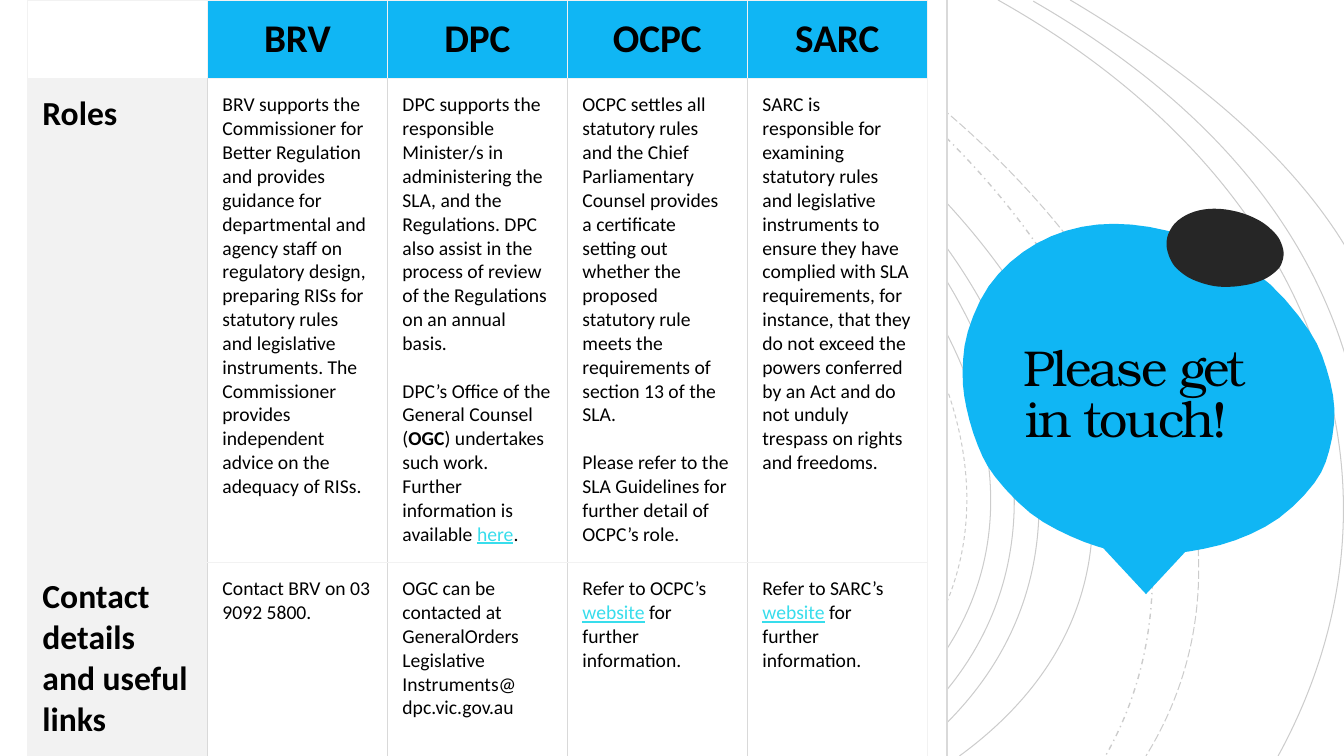
from lxml import etree
from pptx import Presentation
from pptx import util as u
from pptx.dml.color import RGBColor
from pptx.enum import dml, shapes, text
from pptx.oxml import ns

BLUE = RGBColor(0x10, 0xB6, 0xF4)
BLACK = RGBColor(0, 0, 0)
CHARCOAL = RGBColor(0x26, 0x26, 0x26)
WHITE = RGBColor(0xFF, 0xFF, 0xFF)
PALE = RGBColor(0xF2, 0xF2, 0xF2)
GREY = RGBColor(0xD9, 0xD9, 0xD9)
LINK = RGBColor(0x38, 0xDD, 0xEC)

DASH = dml.MSO_LINE.DASH
DASH_DOT = dml.MSO_LINE.DASH_DOT
LONG_DASH = dml.MSO_LINE.LONG_DASH
SOLID = dml.MSO_LINE.SOLID

# Four Bezier points in centimetres, line width, dash
ARCS = [
    ((11.05, 0), (21.21, 2.92), (28.17, 13.74), (19.0, 19.05), 0.75, SOLID),
    ((12.7, 0), (22.43, 3.18), (28.98, 13.69), (20.35, 19.05), 0.75, DASH),
    ((13.46, 0), (23.04, 3.25), (29.51, 13.67), (21.03, 19.05), 0.75, SOLID),
    ((15.14, 0), (24.08, 3.38), (29.51, 13.77), (22.05, 19.05), 0.75, SOLID),
    ((15.7, 0), (24.61, 3.51), (30.02, 13.56), (22.91, 19.05), 0.75, SOLID),
    ((16.64, 0), (25.15, 3.73), (31.83, 13.46), (24.18, 19.05), 0.75, SOLID),
    ((19.25, 0), (26.82, 4.24), (31.32, 12.95), (27.86, 19.05), 1, DASH_DOT),
    ((19.74, 0), (27.58, 4.29), (32.79, 12.7), (28.88, 19.05), 0.75, LONG_DASH),
    ((25.15, 0), (33.53, 4.7), (35.81, 12.47), (32.21, 19.05), 0.75, SOLID),
    ((26.04, 0.03), (30.23, 2.44), (32.82, 5.44), (33.9, 8.94), 0.75, SOLID),
    ((26.97, 0), (29.92, 1.75), (32.44, 3.81), (33.9, 6.2), 0.75, SOLID),
]

# Outline shared by the bubble and its dark spot, in percent of the box
BLOB = [
    (1, 55.5), (0, 45), (1.4, 32.6), (7, 18.9), (16.3, 8.5), (27.9, 2.1),
    (40.7, 0), (55, 2.1), (69.4, 8.2), (82.7, 18.3), (93.2, 32.3), (97.8, 43.6),
    (100, 56.1), (98.6, 68.6), (94.6, 78.4), (85.1, 89), (73.4, 95.7), (61, 99.1),
    (50.1, 100), (40.1, 98.8), (29, 94.5), (18.2, 87.5), (8.7, 76.5), (4.1, 67.1),
]

HEADINGS = ["", "BRV", "DPC", "OCPC", "SARC"]
# Each cell is a list of paragraphs; ** marks bold and __ marks link text
ROLES = [
    ["**Roles"],
    ["BRV supports the Commissioner for Better Regulation and provides guidance for "
     "departmental and agency staff on regulatory design, preparing RISs for statutory "
     "rules and legislative instruments. The Commissioner provides independent advice "
     "on the adequacy of RISs."],
    ["DPC supports the responsible Minister/s in administering the SLA, and the "
     "Regulations. DPC also assist in the process of review of the Regulations on an "
     "annual basis.",
     "DPC’s Office of the General Counsel (|**OGC|) undertakes such work. Further "
     "information is available |__here|."],
    ["OCPC settles all statutory rules and the Chief Parliamentary Counsel provides a "
     "certificate setting out whether the proposed statutory rule meets the "
     "requirements of section 13 of the SLA.",
     "Please refer to the SLA Guidelines for further detail of OCPC’s role."],
    ["SARC is responsible for examining statutory rules and legislative instruments to "
     "ensure they have complied with SLA requirements, for instance, that they do not "
     "exceed the powers conferred by an Act and do not unduly trespass on rights and "
     "freedoms."],
]
CONTACTS = [
    ["**Contact details and useful links"],
    ["Contact BRV on 03 9092 5800."],
    ["OGC can be contacted at GeneralOrders\nLegislative\nInstruments@\ndpc.vic.gov.au"],
    ["Refer to OCPC’s |__website| for further information."],
    ["Refer to SARC’s |__website| for further information."],
]


def set_attributes(target, values):
    for name, value in values.items():
        setattr(target, name, value)


def paint(shape, colour):
    shape.shadow.inherit = False
    shape.fill.solid()
    shape.fill.fore_color.rgb = colour
    shape.line.fill.background()


def add_outline(slide, points, close):
    """Draw a freeform through points given in centimetres."""
    vertices = [(u.Cm(x), u.Cm(y)) for x, y in points]
    builder = slide.shapes.build_freeform(*vertices[0], scale=1.0)
    builder.add_line_segments(vertices[1:], close=close)
    shape = builder.convert_to_shape()
    shape.shadow.inherit = False
    return shape


def add_curve(slide, controls):
    """Draw one Bezier curve by joining the three segments of its control points."""
    shape = add_outline(slide, controls, close=False)
    segments = list(shape._element.iter(ns.qn("a:lnTo")))
    curve = etree.SubElement(segments[0].getparent(), ns.qn("a:cubicBezTo"))
    for segment in segments:
        curve.append(segment[0])
        segment.getparent().remove(segment)
    shape.fill.background()
    return shape


def add_arcs(slide):
    for *controls, width, dash in ARCS:
        arc = add_curve(slide, controls)
        set_attributes(arc.line, {"width": u.Pt(width), "dash_style": dash})
        arc.line.color.rgb = BLACK
        colour = arc.line._ln.find(".//" + ns.qn("a:srgbClr"))
        etree.SubElement(colour, ns.qn("a:alpha"), val="20000")


def smooth(before, start, end, after, t):
    """Return the Catmull-Rom value at t between start and end."""
    return start + t / 2 * (end - before + t * (
        2 * before - 5 * start + 4 * end - after + t * (3 * (start - end) + after - before)))


def add_blob(slide, left, top, width, height, colour, steps=3):
    """Draw the rounded outline, smoothed between its points, in the given box."""
    corners = [(left + x * width / 100, top + y * height / 100) for x, y in BLOB]
    points = []
    for i in range(len(corners)):
        nearby = [corners[(i + k) % len(corners)] for k in (-1, 0, 1, 2)]
        for step in range(steps):
            points.append([smooth(*values, step / steps) for values in zip(*nearby)])
    paint(add_outline(slide, points, close=True), colour)


def add_preset(slide, kind, box, colour, rotation=0):
    shape = slide.shapes.add_shape(kind, *map(u.Cm, box))
    shape.rotation = rotation
    paint(shape, colour)


def add_divider(slide, x, height):
    divider = slide.shapes.add_connector(
        shapes.MSO_CONNECTOR.STRAIGHT, u.Cm(x), 0, u.Cm(x), u.Cm(height))
    divider.line.width = u.Pt(1.5)
    divider.line.color.rgb = GREY
    etree.SubElement(divider._element.spPr, ns.qn("a:effectLst"))


def set_borders(cell, colours):
    """Give the left, right, top and bottom borders their colours."""
    properties = cell._tc.get_or_add_tcPr()
    for index, (side, colour) in enumerate(zip("LRTB", colours)):
        line = etree.Element(ns.qn(f"a:ln{side}"), w=str(u.Pt(0.25)))
        fill = etree.SubElement(line, ns.qn("a:solidFill"))
        etree.SubElement(fill, ns.qn("a:srgbClr"), val=str(colour))
        properties.insert(index, line)


def write_paragraph(paragraph, marked_text, size):
    for part in marked_text.split("|"):
        bold, link = part.startswith("**"), part.startswith("__")
        for index, line in enumerate(part.removeprefix("**").removeprefix("__").split("\n")):
            if index:
                paragraph.add_line_break()
            run = paragraph.add_run()
            run.text = line
            set_attributes(run.font, {"name": "Calibri", "size": u.Pt(size),
                                      "bold": bold, "underline": link})
            run.font.color.rgb = LINK if link else BLACK


def fill_cell(cell, paragraphs, size, colour, heading):
    for side in ("left", "right", "top", "bottom"):
        setattr(cell, f"margin_{side}", u.Cm(0.38))
    if colour is None:
        cell.fill.background()
    else:
        cell.fill.solid()
        cell.fill.fore_color.rgb = colour
    if heading:
        cell.vertical_anchor = text.MSO_ANCHOR.MIDDLE
    frame = cell.text_frame
    for index, marked_text in enumerate(paragraphs):
        paragraph = frame.add_paragraph() if index else frame.paragraphs[0]
        if index:
            paragraph.space_before = u.Pt(17)
        if heading:
            paragraph.alignment = text.PP_ALIGN.CENTER
        if marked_text:
            write_paragraph(paragraph, marked_text, size)


def add_contact_table(slide, left, top, width, row_heights):
    rows = [[["**" + name if name else ""] for name in HEADINGS], ROLES, CONTACTS]
    last = len(HEADINGS) - 1
    table = slide.shapes.add_table(len(rows), len(HEADINGS), u.Cm(left), u.Cm(top),
                                   u.Cm(width), u.Cm(sum(row_heights))).table
    set_attributes(table, {"first_row": False, "horz_banding": False})
    for r, (height, row) in enumerate(zip(row_heights, rows)):
        table.rows[r].height = u.Cm(height)
        for c, paragraphs in enumerate(row):
            cell = table.cell(r, c)
            heading = r == 0
            if heading:
                size, colour = 28, BLUE if c else None
            else:
                size, colour = (14, None) if c else (24, PALE)
            fill_cell(cell, paragraphs, size, colour, heading)
            set_borders(cell, (GREY if r and c else PALE,
                               GREY if r and c < last else PALE,
                               PALE, GREY if r == 2 else PALE))


def place_title(slide, left, top, width, height):
    title = slide.shapes.title
    set_attributes(title, {"left": u.Cm(left), "top": u.Cm(top),
                           "width": u.Cm(width), "height": u.Cm(height)})
    frame = title.text_frame
    set_attributes(frame, {"word_wrap": True, "auto_size": text.MSO_AUTO_SIZE.NONE,
                           "vertical_anchor": text.MSO_ANCHOR.MIDDLE})
    for side in ("left", "right", "top", "bottom"):
        setattr(frame, f"margin_{side}", u.Cm(0.64))
    paragraph = frame.paragraphs[0]
    set_attributes(paragraph, {"alignment": text.PP_ALIGN.CENTER, "line_spacing": 0.85})
    run = paragraph.add_run()
    run.text = "Please get in touch! "
    set_attributes(run.font, {"name": "TeX Gyre Bonum", "size": u.Pt(36), "bold": False})
    run.font.color.rgb = BLACK
    run._r.get_or_add_rPr().set("spc", "-150")
    slide.shapes._spTree.append(title._element)


def main():
    presentation = Presentation()
    set_attributes(presentation, {"slide_width": u.Cm(33.87), "slide_height": u.Cm(19.05)})
    slide = presentation.slides.add_slide(presentation.slide_layouts[5])
    add_arcs(slide)
    add_blob(slide, 24.26, 5.64, 9.37, 8.33, BLUE)
    add_preset(slide, shapes.MSO_SHAPE.ISOSCELES_TRIANGLE, (26.49, 12.4, 4.78, 2.57), BLUE, 180)
    add_preset(slide, shapes.MSO_SHAPE.RECTANGLE, (0, 0, 23.87, 19.05), WHITE)
    add_divider(slide, 23.87, 19.05)
    add_blob(slide, 29.4, 5.26, 2.95, 1.97, CHARCOAL)
    add_contact_table(slide, 0.69, 0, 22.68, (1.97, 12.19, 4.89))
    place_title(slide, 24.49, 6.58, 8.15, 6.83)
    presentation.save("out.pptx")


if __name__ == "__main__":
    main()
